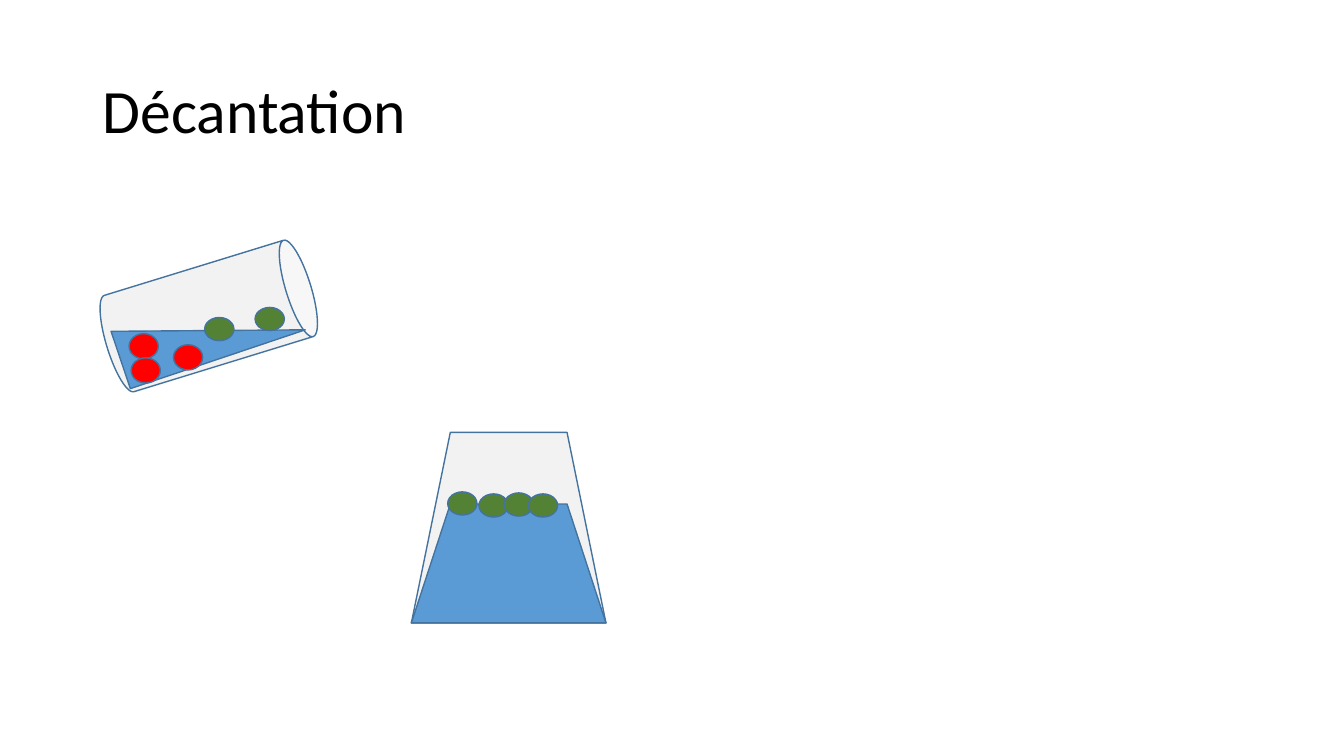
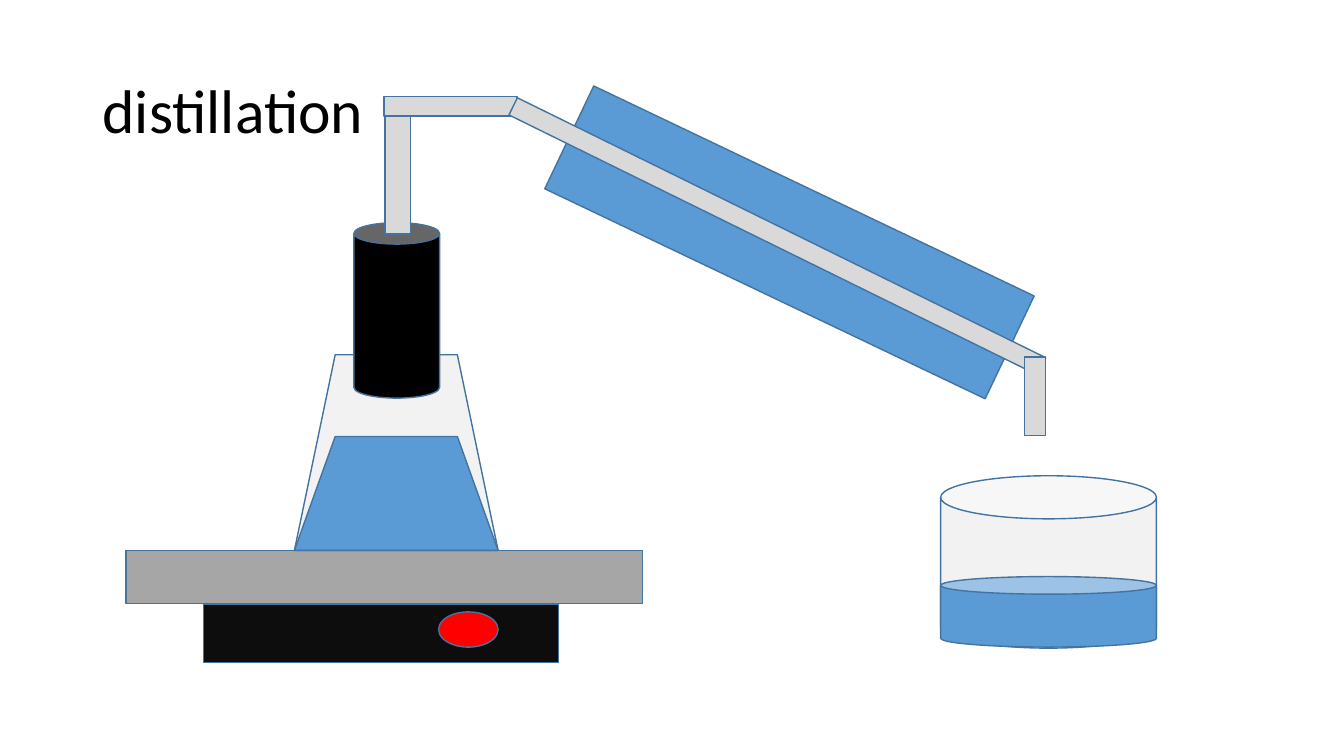
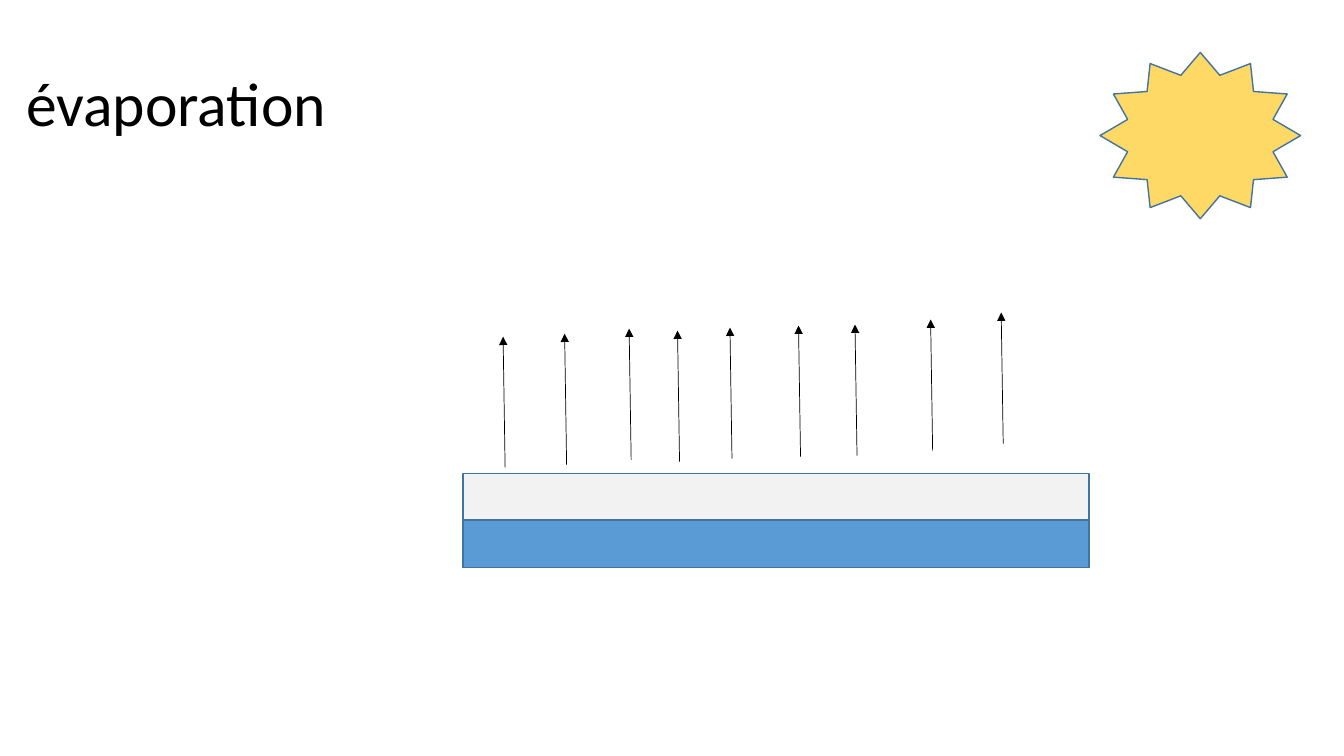
from dataclasses import dataclass
from typing import NamedTuple

from lxml.etree import SubElement as Sub
from pptx import Presentation
from pptx.dml.color import RGBColor as Rgb
from pptx.enum.shapes import MSO_CONNECTOR as Link, MSO_SHAPE as Kind
from pptx.enum.text import MSO_ANCHOR as Anchor
from pptx.oxml.ns import qn
from pptx.slide import Slide
from pptx.util import Inches, Pt


@dataclass(frozen=True)
class Theme:
    font: str = "Calibri"
    size: float = 44
    edge: float = 1
    thin: float = 0.5
    text: str = "000000"
    rim: str = "43739E"
    glass: str = "F2F2F2"
    water: str = "5B9BD5"
    pipe: str = "D9D9D9"
    plate: str = "A6A6A6"
    base: str = "0D0D0D"
    cork: str = "000000"
    red: str = "FF0000"
    green: str = "548235"
    sun: str = "FFD966"


class Part(NamedTuple):
    kind: Kind
    left: float
    top: float
    wide: float
    high: float
    fill: str
    turn: float = 0


class Spot(NamedTuple):
    x: float
    y: float


THEME = Theme()


def draw(slide: Slide, *parts: Part) -> None:
    for part in parts:
        box = map(Inches, (part.left, part.top, part.wide, part.high))
        shape = slide.shapes.add_shape(part.kind, *box)
        shape.rotation = part.turn
        shape.shadow.inherit = False
        shape.fill.solid()
        shape.fill.fore_color.rgb = Rgb.from_string(part.fill)
        shape.line.color.rgb = Rgb.from_string(THEME.rim)
        shape.line.width = Pt(THEME.edge)


def beads(slide: Slide, fill: str, high: float, spots: list[Spot]) -> None:
    for spot in spots:
        draw(slide, Part(Kind.FLOWCHART_CONNECTOR, spot.x, spot.y, 0.29, high, fill))


def flask(slide: Slide, left: float, top: float, wide: float, high: float, depth: float) -> None:
    for tall, fill in ((high, THEME.glass), (depth, THEME.water)):
        draw(slide, Part(Kind.FLOWCHART_MANUAL_OPERATION, left, top + high - tall, wide, tall, fill, 180))


def arrow(slide: Slide, foot: Spot) -> None:
    ends = map(Inches, (foot.x, foot.y, foot.x - 0.02, foot.y - 1.3))
    link = slide.shapes.add_connector(Link.STRAIGHT, *ends)
    link.line.color.rgb = Rgb.from_string(THEME.text)
    link.line.width = Pt(THEME.thin)
    Sub(link.line._get_or_add_ln(), qn("a:tailEnd"), type="triangle")
    Sub(link._element.spPr, qn("a:effectLst"))


def start(deck: Presentation, text: str, left: float = 0.92, top: float = 0.4) -> Slide:
    slide = deck.slides.add_slide(deck.slide_layouts[6])
    box = slide.shapes.add_textbox(Inches(left), Inches(top), Inches(11.5), Inches(1.45))
    frame = box.text_frame
    frame.word_wrap = True
    frame.vertical_anchor = Anchor.MIDDLE
    frame.text = text
    line = frame.paragraphs[0]
    line.line_spacing = 0.9
    font = line.runs[0].font
    font.name = THEME.font
    font.size = Pt(THEME.size)
    font.color.rgb = Rgb.from_string(THEME.text)
    return slide


def settle(deck: Presentation) -> None:
    slide = start(deck, "Décantation")
    draw(
        slide,
        Part(Kind.CAN, 1.57, 2.08, 1, 2.11, THEME.glass, 72.9),
        Part(Kind.RIGHT_TRIANGLE, 1.15, 2.98, 1.83, 0.6, THEME.water, 341.4),
    )
    beads(slide, THEME.red, 0.25, [Spot(1.28, 3.31), Spot(1.3, 3.55), Spot(1.72, 3.42)])
    beads(slide, THEME.green, 0.23, [Spot(2.53, 3.05), Spot(2.03, 3.15)])
    flask(slide, 4.08, 4.29, 1.93, 1.89, 1.18)
    afloat = [Spot(4.44, 4.88), Spot(4.75, 4.9), Spot(5, 4.89), Spot(5.24, 4.9)]
    beads(slide, THEME.green, 0.23, afloat)


def distil(deck: Presentation) -> None:
    slide = start(deck, "distillation")
    draw(
        slide,
        Part(Kind.FLOWCHART_PROCESS, 2.02, 5.99, 3.52, 0.58, THEME.base),
        Part(Kind.FLOWCHART_PROCESS, 1.25, 5.46, 5.12, 0.53, THEME.plate),
        Part(Kind.FLOWCHART_CONNECTOR, 4.35, 6.07, 0.59, 0.35, THEME.red),
    )
    flask(slide, 2.92, 3.52, 2.02, 1.94, 1.13)
    draw(
        slide,
        Part(Kind.CAN, 3.51, 2.21, 0.85, 1.74, THEME.cork),
        Part(Kind.FLOWCHART_PROCESS, 3.82, 1.1, 0.25, 1.22, THEME.pipe),
        Part(Kind.RECTANGLE, 3.81, 0.96, 1.32, 0.19, THEME.pipe),
        Part(Kind.RECTANGLE, 5.41, 1.84, 4.84, 1.13, THEME.water, 25.5),
        Part(Kind.RECTANGLE, 4.79, 2.25, 5.84, 0.19, THEME.pipe, 26.2),
        Part(Kind.FLOWCHART_PROCESS, 10.16, 3.54, 0.21, 0.78, THEME.pipe),
        Part(Kind.CAN, 9.33, 4.72, 2.14, 1.71, THEME.glass),
        Part(Kind.CAN, 9.33, 5.72, 2.14, 0.7, THEME.water),
    )


def dry(deck: Presentation) -> None:
    slide = start(deck, "évaporation", 0.16, 0.33)
    draw(
        slide,
        Part(Kind.RECTANGLE, 4.59, 4.7, 6.21, 0.93, THEME.glass),
        Part(Kind.RECTANGLE, 4.59, 5.16, 6.21, 0.47, THEME.water),
        Part(Kind.STAR_12_POINT, 10.91, 0.52, 1.99, 1.65, THEME.sun),
    )
    feet = [
        Spot(5.01, 4.64), Spot(5.62, 4.61), Spot(6.26, 4.56),
        Spot(6.74, 4.58), Spot(7.26, 4.55), Spot(7.94, 4.53),
        Spot(8.5, 4.52), Spot(9.25, 4.47), Spot(9.95, 4.4),
    ]
    for foot in feet:
        arrow(slide, foot)


def main() -> None:
    deck = Presentation()
    deck.slide_width = Inches(13.33)
    deck.slide_height = Inches(7.5)
    for build in (settle, distil, dry):
        build(deck)
    deck.save("out.pptx")


if __name__ == "__main__":
    main()
